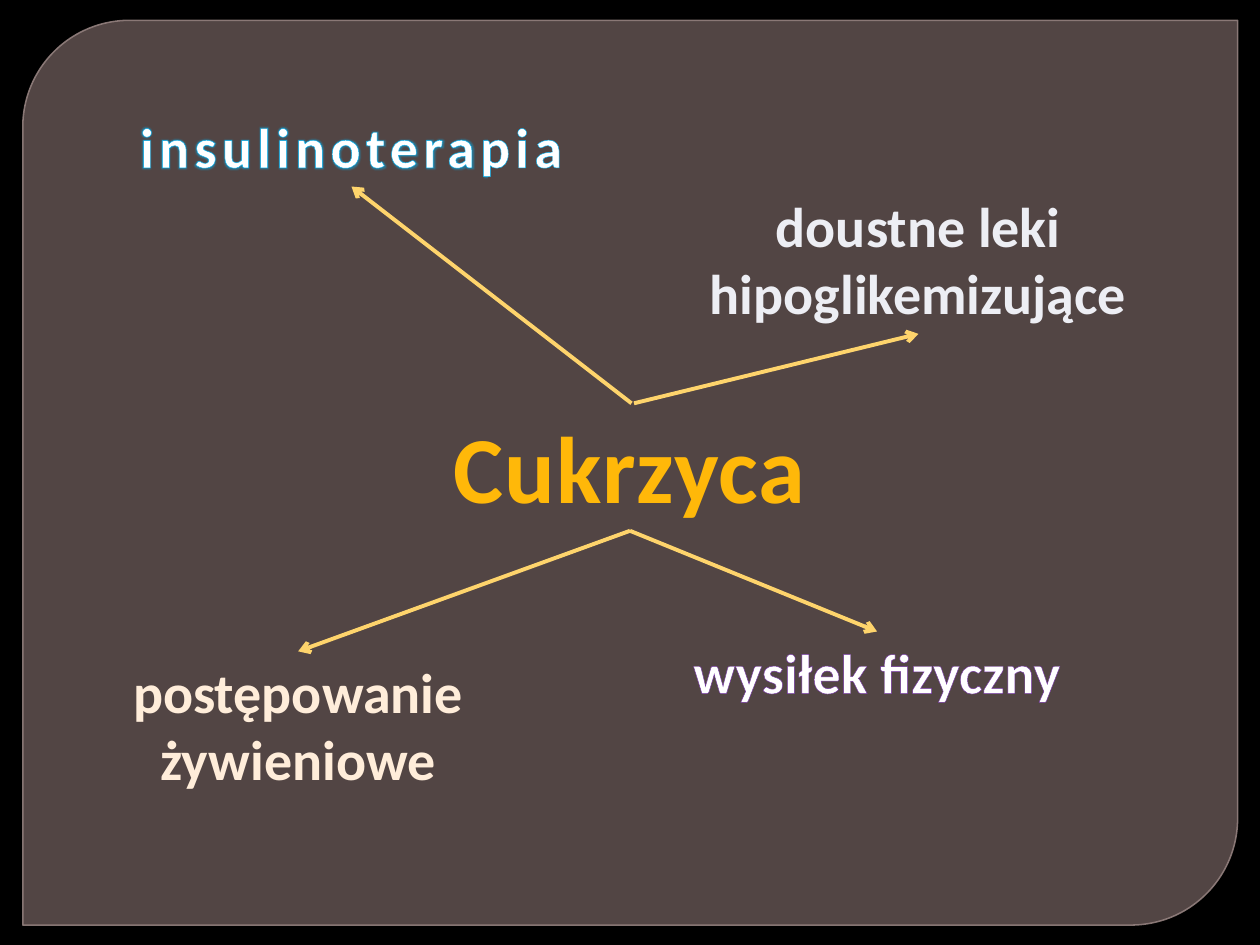
from lxml.etree import SubElement
from pptx import Presentation
from pptx.dml.color import RGBColor
from pptx.enum.shapes import MSO_CONNECTOR, MSO_SHAPE
from pptx.enum.text import MSO_AUTO_SIZE, PP_ALIGN
from pptx.oxml import parse_xml
from pptx.oxml.ns import nsdecls, qn
from pptx.util import Cm, Pt

# Content: lengths in cm, text sizes and line widths in points
FONT = "Calibri"
ARROW_COLOR = "FED46C"
CENTER = dict(lines=["Cukrzyca"], box=(8.13, 8.13, 9.14, 2.57), size=54, spacing=0.5,
              stops=[(25, "FFB809"), (100, "BB8500")], wrap=True)
# "start" is the shift of the arrow's start from the middle of the central box's edge
TREATMENTS = [
    dict(lines=["insulinoterapia"], box=(1.98, 2.13, 10.21, 1.63), color="FFFFFF",
         outline=("00B0F0", 0.9), spacing=3, glow="00B0F0", start=0.03),
    dict(lines=["doustne leki", "hipoglikemizujące"], box=(13.36, 3.73, 10.31, 3),
         color="EDEEF4", outline=("638026", 2.48), start=0.08),
    dict(lines=["postępowanie", "żywieniowe"], box=(1.96, 13.13, 8.1, 3),
         stops=[(10, "FFF9F3"), (60, "FFEDDA"), (100, "FFCE90")],
         outline=("F6AF00", 1.93)),
    dict(lines=["wysiłek fizyczny"], box=(13.03, 12.73, 9.3, 1.63), color="FFFFFF",
         outline=("7030A0", 1.4)),
]


def rgb(value):
    return RGBColor.from_string(value)


def set_alpha(fill_element, percent):
    color = fill_element.find(".//" + qn("a:srgbClr"))
    SubElement(color, qn("a:alpha")).set("val", str(percent * 1000))


def gradient(stops):
    marks = "".join(f'<a:gs pos="{position * 1000}"><a:srgbClr val="{color}"/></a:gs>'
                    for position, color in stops)
    return parse_xml(f'<a:gradFill {nsdecls("a")}><a:gsLst>{marks}</a:gsLst>'
                     '<a:lin ang="5400000" scaled="0"/></a:gradFill>')


def style_run(run, size=32, color=None, stops=None, outline=None, spacing=0, glow=None):
    font = run.font
    font.size, font.bold = Pt(size), True
    if color:
        font.fill.solid()
        font.fill.fore_color.rgb = rgb(color)
    properties = font._element
    if stops:
        properties.insert(0, gradient(stops))
    if glow:
        properties.append(parse_xml(
            f'<a:effectLst {nsdecls("a")}><a:glow rad="38100"><a:srgbClr val="{glow}">'
            '<a:alpha val="40000"/></a:srgbClr></a:glow></a:effectLst>'))
    font.name = FONT
    if outline:
        line_color, width = outline
        properties.insert(0, parse_xml(
            f'<a:ln {nsdecls("a")} w="{Pt(width)}"><a:solidFill>'
            f'<a:srgbClr val="{line_color}"/></a:solidFill></a:ln>'))
    if spacing:
        properties.set("spc", str(int(spacing * 100)))


def add_label(slide, lines, box, wrap=False, start=0, **style):
    frame = slide.shapes.add_textbox(*map(Cm, box)).text_frame
    frame.word_wrap = wrap
    frame.auto_size = MSO_AUTO_SIZE.SHAPE_TO_FIT_TEXT
    for index, line in enumerate(lines):
        paragraph = frame.add_paragraph() if index else frame.paragraphs[0]
        paragraph.alignment = PP_ALIGN.CENTER
        run = paragraph.add_run()
        run.text = line
        style_run(run, **style)


def add_arrow(slide, box, start=0):
    """Join the facing edges of the central box and a treatment box."""
    left, top, width, height = CENTER["box"]
    target_left, target_top, target_width, target_height = box
    above = target_top < top
    ends = (left + width / 2 + start, top if above else top + height,
            target_left + target_width / 2,
            target_top + target_height if above else target_top)
    arrow = slide.shapes.add_connector(MSO_CONNECTOR.STRAIGHT, *map(Cm, ends))
    arrow.line.color.rgb = rgb(ARROW_COLOR)
    arrow.line.width = Pt(2.25)
    SubElement(arrow.line._get_or_add_ln(), qn("a:tailEnd")).set("type", "arrow")
    SubElement(arrow._element.spPr, qn("a:effectLst"))


def add_panel(slide):
    panel = slide.shapes.add_shape(MSO_SHAPE.ROUND_2_DIAG_RECTANGLE,
                                   Cm(0.46), Cm(0.41), Cm(24.49), Cm(18.24))
    panel.adjustments[0], panel.adjustments[1] = 0.118, 0
    panel.shadow.inherit = False
    panel.fill.solid()
    panel.fill.fore_color.rgb = rgb("7F6B69")
    set_alpha(panel._element.spPr.find(qn("a:solidFill")), 65)
    panel.line.color.rgb = rgb("968381")
    panel.line.width = Pt(0.87)
    set_alpha(panel.line._get_or_add_ln(), 88)


def main():
    presentation = Presentation()
    presentation.slide_width, presentation.slide_height = Cm(25.4), Cm(19.05)
    slide = presentation.slides.add_slide(presentation.slide_layouts[6])
    slide.background.fill.solid()
    slide.background.fill.fore_color.rgb = rgb("000000")

    # Panel, then labels, then arrows from the centre
    add_panel(slide)
    for label in [CENTER, *TREATMENTS]:
        add_label(slide, **label)
    for treatment in TREATMENTS:
        add_arrow(slide, treatment["box"], treatment.get("start", 0))
    presentation.save("out.pptx")


if __name__ == "__main__":
    main()
